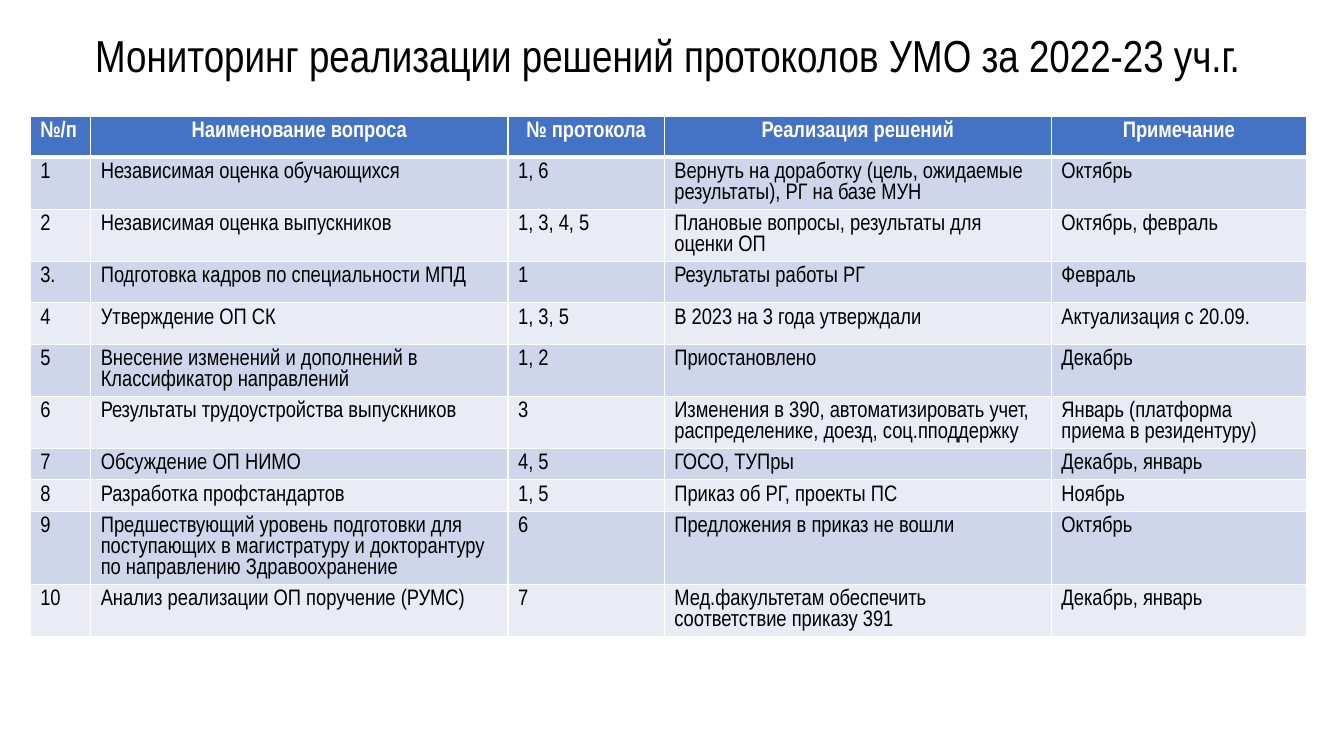
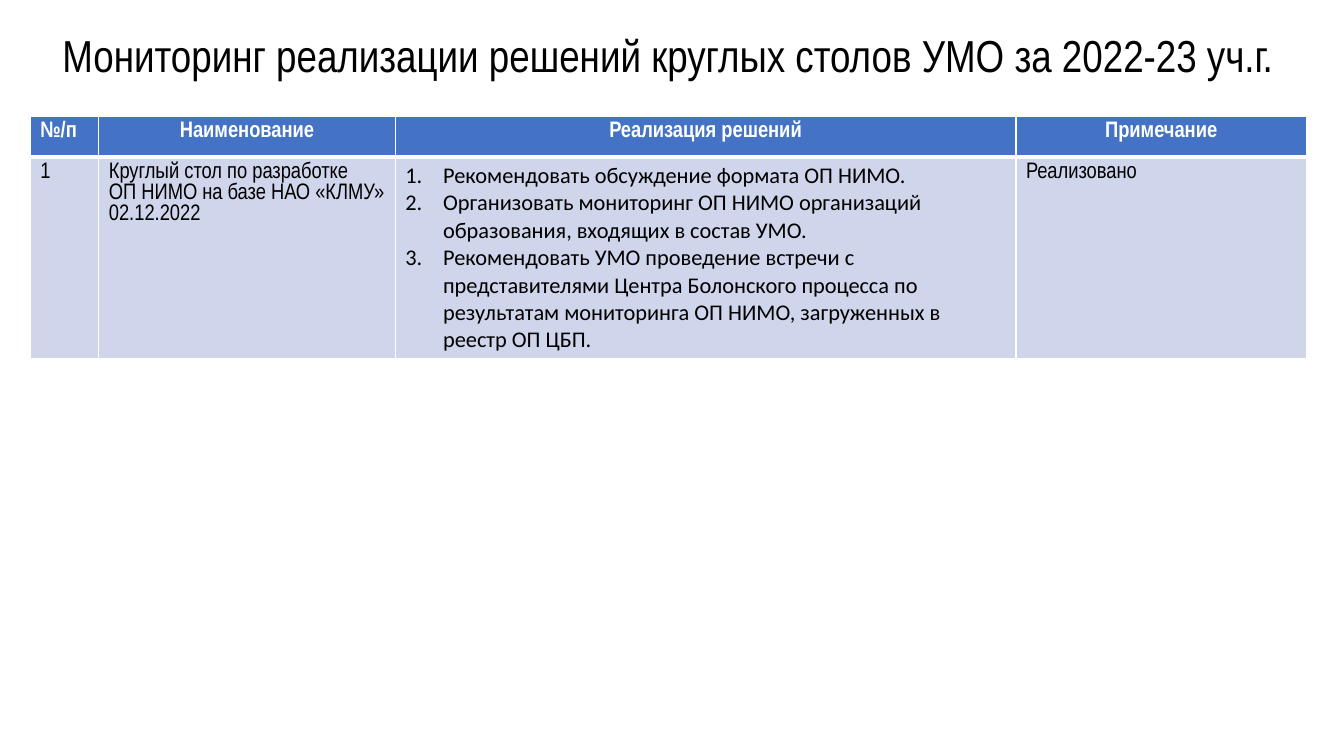
import dataclasses

import pptx
import pptx.dml.color
import pptx.enum.text
import pptx.oxml
import pptx.oxml.ns
import pptx.util

Pt = pptx.util.Pt
RGB = pptx.dml.color.RGBColor.from_string
ALIGN = pptx.enum.text.PP_ALIGN


@dataclasses.dataclass(frozen=True)
class Theme:
    ink: str = "000000"
    white: str = "FFFFFF"
    header: str = "4472C4"
    bands: tuple = ("CFD5EA", "E9EBF5")
    font: str = "Arial Narrow"
    list_font: str = "Calibri"
    title_size: float = 32
    text_size: float = 16
    thin: float = 1
    thick: float = 3
    list_indent: float = 27


THEME = Theme()

# Boxes as left, top, width, height
TITLE_BOX = (21.6, 0, 911.6, 82.8)
TABLE_BOX = (21.6, 82.8, 911.6, 0)

# Row heights by number of text lines
HEADER_ROW = 29.5
ONE, LOOSE, TWO, THREE, LIST = 22.4, 29.5, 37.2, 52.2, 144

PROTOCOLS = dict(
    title="Мониторинг реализации решений протоколов УМО за 2022-23 уч.г.",
    widths=(43.2, 298.1, 111.6, 276.5, 182.2),
    heads=("№/п", "Наименование вопроса", "№ протокола", "Реализация решений", "Примечание"),
    rows=(
        (TWO, "1", "Независимая оценка обучающихся", "1, 6",
         "Вернуть на доработку (цель, ожидаемые результаты), РГ на базе МУН", "Октябрь"),
        (TWO, "2", "Независимая оценка выпускников", "1, 3, 4, 5",
         "Плановые вопросы, результаты для оценки ОП", "Октябрь, февраль"),
        (LOOSE, "3.", "Подготовка кадров по специальности МПД", "1",
         "Результаты работы РГ", "Февраль"),
        (LOOSE, "4", "Утверждение ОП СК", "1, 3, 5",
         "В 2023 на 3 года утверждали", "Актуализация с 20.09."),
        (TWO, "5", "Внесение изменений и дополнений в Классификатор направлений", "1, 2",
         "Приостановлено", "Декабрь"),
        (TWO, "6", "Результаты трудоустройства выпускников", "3",
         "Изменения в 390, автоматизировать учет, распределенике, доезд, соц.пподдержку",
         "Январь (платформа приема в резидентуру)"),
        (ONE, "7", "Обсуждение ОП НИМО", "4, 5", "ГОСО, ТУПры", "Декабрь, январь"),
        (ONE, "8", "Разработка профстандартов", "1, 5", "Приказ об РГ, проекты ПС", "Ноябрь"),
        (THREE, "9", "Предшествующий уровень подготовки для поступающих в магистратуру "
         "и докторантуру по направлению Здравоохранение", "6",
         "Предложения в приказ не вошли", "Октябрь"),
        (TWO, "10", "Анализ реализации ОП поручение (РУМС)", "7",
         "Мед.факультетам обеспечить соответствие приказу 391", "Декабрь, январь"),
    ),
)

# A tuple in a cell is a numbered list
ROUND_TABLES = dict(
    title="Мониторинг реализации решений круглых столов УМО за 2022-23 уч.г.",
    widths=(49, 211.7, 443.5, 207.4),
    heads=("№/п", "Наименование", "Реализация решений", "Примечание"),
    rows=(
        (LIST, "1", "Круглый стол по разработке\vОП НИМО на базе НАО «КЛМУ»\v02.12.2022",
         ("Рекомендовать обсуждение формата ОП НИМО.",
          "Организовать мониторинг ОП НИМО организаций образования, входящих в состав УМО.",
          "Рекомендовать УМО проведение встречи с представителями Центра Болонского процесса "
          "по результатам мониторинга ОП НИМО, загруженных в реестр ОП ЦБП."),
         "Реализовано"),
    ),
)


def style_runs(p, size, color, font=THEME.font, bold=False):
    for r in p.runs:
        r.font.name = font
        r.font.size = Pt(size)
        r.font.bold = bold
        r.font.color.rgb = RGB(color)


def number_paragraph(p):
    pPr = p._p.get_or_add_pPr()
    indent = Pt(THEME.list_indent)
    pPr.set("marL", str(indent))
    pPr.set("indent", str(-indent))
    pPr.append(pptx.oxml.parse_xml(
        f'<a:buAutoNum {pptx.oxml.ns.nsdecls("a")} type="arabicPeriod"/>'))


def set_borders(cell, top, bottom):
    """Draw white edges; they must come before the fill in the cell."""
    tcPr = cell._tc.get_or_add_tcPr()
    for side, width in (("L", THEME.thin), ("R", THEME.thin), ("T", top), ("B", bottom)):
        tcPr.append(pptx.oxml.parse_xml(
            f'<a:ln{side} {pptx.oxml.ns.nsdecls("a")} w="{Pt(width)}"><a:solidFill>'
            f'<a:srgbClr val="{THEME.white}"/></a:solidFill></a:ln{side}>'))


def fill_cell(cell, content, row, col):
    is_head, is_list = row == 0, isinstance(content, tuple)
    set_borders(cell, THEME.thick if row == 1 else THEME.thin,
                THEME.thick if is_head else THEME.thin)
    cell.fill.solid()
    cell.fill.fore_color.rgb = RGB(THEME.header if is_head else THEME.bands[(row - 1) % 2])
    tf = cell.text_frame
    tf.text = "\n".join(content) if is_list else content
    for p in tf.paragraphs:
        p.alignment = ALIGN.CENTER if is_head and col else ALIGN.LEFT
        if is_list:
            number_paragraph(p)
        style_runs(p, THEME.text_size, THEME.white if is_head else THEME.ink,
                   THEME.list_font if is_list else THEME.font, is_head)


def add_title(s, box, text):
    sp = s.shapes.title
    sp.left, sp.top, sp.width, sp.height = map(Pt, box)
    tf = sp.text_frame
    tf.text = text
    tf.word_wrap = True
    tf.vertical_anchor = pptx.enum.text.MSO_ANCHOR.MIDDLE
    p = tf.paragraphs[0]
    p.alignment = ALIGN.CENTER
    p.line_spacing = 0.9
    style_runs(p, THEME.title_size, THEME.ink)


def add_grid(s, box, widths, heads, rows):
    left, top, width, _ = box
    lines = ((HEADER_ROW, *heads), *rows)
    height = sum(line[0] for line in lines)
    table = s.shapes.add_table(len(lines), len(widths), Pt(left), Pt(top),
                               Pt(width), Pt(height)).table
    scale = width / sum(widths)
    for column, w in zip(table.columns, widths):
        column.width = Pt(w * scale)
    for i, (row_height, *contents) in enumerate(lines):
        table.rows[i].height = Pt(row_height)
        for j, content in enumerate(contents):
            fill_cell(table.cell(i, j), content, i, j)


def add_monitoring_slide(prs, title, widths, heads, rows):
    s = prs.slides.add_slide(prs.slide_layouts[5])
    add_title(s, TITLE_BOX, title)
    add_grid(s, TABLE_BOX, widths, heads, rows)


def main():
    prs = pptx.Presentation()
    prs.slide_width, prs.slide_height = Pt(960), Pt(540)
    for content in (PROTOCOLS, ROUND_TABLES):
        add_monitoring_slide(prs, **content)
    prs.save("out.pptx")


if __name__ == "__main__":
    main()
